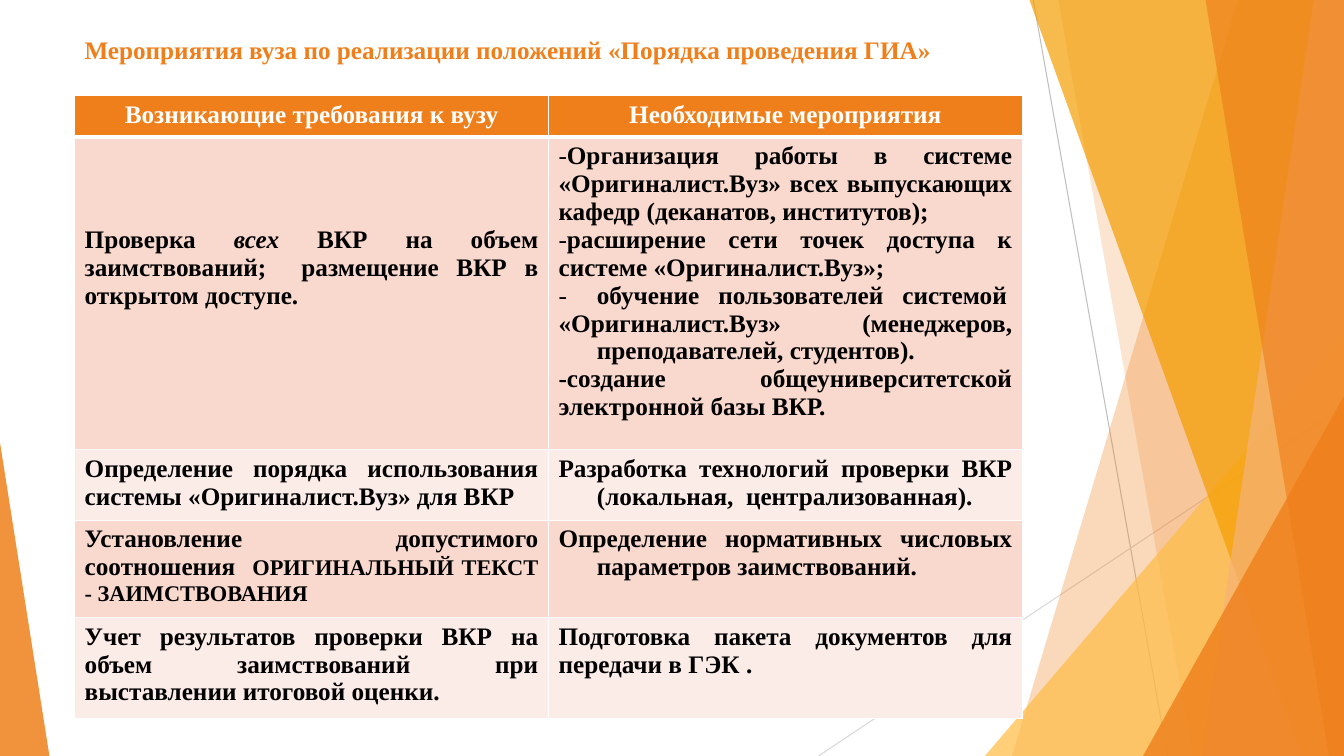
from pptx import Presentation
from pptx.dml.color import RGBColor
from pptx.enum.shapes import MSO_CONNECTOR as CONN, MSO_SHAPE as SHAPE
from pptx.enum.text import PP_ALIGN as ALIGN
from pptx.oxml.ns import qn
from pptx.util import Inches, Pt
from lxml.etree import SubElement

W, H = Inches(13.33), Inches(7.5)
FONT = "Times New Roman"
COLORS = {
    "orange": "EF7F1B", "amber": "F49D00", "yellow": "FFBD47", "peach": "F5B276",
    "grey": "BFBFBF", "light_grey": "D9D9D9", "white": "FFFFFF", "black": "000000",
    "band": "F9D8CD", "pale_band": "FCECE8",
}
TITLE = "Мероприятия вуза по реализации положений «Порядка проведения ГИА»"
HEADERS = ["Возникающие требования к вузу", "Необходимые мероприятия"]
HANG, BULLET = "hang", "bullet"
WIDE_GAP = (" ", 18, False)

BODY = [
    ([("", ("Проверка ", 18, False), ("всех ", 18, True),
       ("ВКР на объем заимствований;  размещение ВКР в открытом доступе.", 18, False))],
     [(BULLET, ("Организация работы в системе «Оригиналист.Вуз» всех выпускающих "
                "кафедр (деканатов, институтов);", 18, False)),
      (BULLET, ("расширение сети точек доступа к системе «Оригиналист.Вуз»;", 18, False)),
      (BULLET + HANG, ("обучение", 18, False), WIDE_GAP,
       ("пользователей", 18, False), WIDE_GAP, ("системой", 18, False)),
      (HANG, ("«Оригиналист.Вуз» (менеджеров, преподавателей, студентов).", 18, False)),
      ("", ("-создание общеуниверситетской электронной базы ВКР.", 18, False))]),
    ([("", ("Определение порядка использования системы «Оригиналист.Вуз» для ВКР", 18, False))],
     [(HANG, ("Разработка технологий проверки ВКР (локальная,  централизованная).", 18, False))]),
    ([("", ("Установление допустимого соотношения  ", 18, False),
       ("ОРИГИНАЛЬНЫЙ ТЕКСТ - ЗАИМСТВОВАНИЯ", 16, False))],
     [(HANG, ("Определение нормативных числовых параметров заимствований.", 18, False))]),
    ([("", ("Учет результатов проверки ВКР на объем заимствований при выставлении "
            "итоговой оценки.", 18, False))],
     [("", ("Подготовка пакета документов для передачи в ГЭК .", 18, False))]),
]


def rgb(name):
    return RGBColor.from_string(COLORS[name])


def place(box, x, y):
    left, top, width, height = box
    return int(left + width * x / 100), int(top + height * y / 100)


def add_run(p, text, color, size=18, italic=False):
    r = p.add_run()
    r.text = text
    r.font.name, r.font.size = FONT, Pt(size)
    r.font.bold, r.font.italic = True, italic
    r.font.color.rgb = rgb(color)
    return r


def paint(sp, color, opacity):
    sp.shadow.inherit = False
    sp.fill.solid()
    sp.fill.fore_color.rgb = rgb(color)
    sp.line.fill.background()
    tint = sp.fill._xPr.find(qn("a:solidFill"))[0]
    SubElement(tint, qn("a:alpha")).set("val", str(opacity * 1000))


def add_facet(s, box, top_x, bottom_x, color, opacity):
    corners = [place(box, x, y) for x, y in
               [(top_x, 0), (100, 0), (100, 100), (bottom_x, 100)]]
    builder = s.shapes.build_freeform(*corners[0])
    builder.add_line_segments(corners[1:], close=True)
    paint(builder.convert_to_shape(), color, opacity)


def add_corner(s, box, left, top, right, apex, color, opacity):
    x1, y1 = place(box, left, top)
    x2, y2 = place(box, right, 100)
    sp = s.shapes.add_shape(SHAPE.ISOSCELES_TRIANGLE, x1, y1, x2 - x1, y2 - y1)
    sp.adjustments[0] = apex
    paint(sp, color, opacity)


def add_backdrop(s, box):
    for start, end, color in [((76.88, 0), (86.87, 100), "grey"),
                              ((100, 53.7), (60.9, 100), "light_grey")]:
        line = s.shapes.add_connector(CONN.STRAIGHT, *place(box, *start), *place(box, *end))
        line.line.color.rgb, line.line.width = rgb(color), Pt(0.75)
        SubElement(line._element.spPr, qn("a:effectLst"))
    add_facet(s, box, 92.1, 75.3, "orange", 30)
    add_facet(s, box, 78.75, 88.75, "orange", 20)
    add_corner(s, box, 73.28, 44.4, 100, 1, "yellow", 72)
    add_facet(s, box, 76.6, 96.85, "amber", 70)
    add_facet(s, box, 97.75, 89.4, "peach", 70)
    add_facet(s, box, 89.7, 98.87, "orange", 65)
    add_corner(s, box, 85.05, 52.4, 100, 1, "orange", 80)
    add_corner(s, box, 0, 58.53, 3.68, 0, "orange", 85)


def add_title(s, box):
    tf = s.shapes.add_textbox(*box).text_frame
    tf.word_wrap = True
    add_run(tf.paragraphs[0], TITLE, "orange")


def style_cell(cell, fill, bottom_width=1):
    tcPr = cell._tc.get_or_add_tcPr()
    for side, width in [("L", 1), ("R", 1), ("T", 1), ("B", bottom_width)]:
        ln = SubElement(tcPr, qn(f"a:ln{side}"), w=str(Pt(width)))
        SubElement(SubElement(ln, qn("a:solidFill")), qn("a:srgbClr"), val=COLORS["white"])
    cell.fill.solid()
    cell.fill.fore_color.rgb = rgb(fill)


def write_cell(cell, paragraphs):
    tf = cell.text_frame
    for i, (layout, *runs) in enumerate(paragraphs):
        p = tf.add_paragraph() if i else tf.paragraphs[0]
        p.alignment = ALIGN.JUSTIFY
        pPr = p._p.get_or_add_pPr()
        if HANG in layout:
            pPr.set("marL", str(Inches(0.38)))
            pPr.set("indent", str(-Inches(0.38)))
        if BULLET in layout:
            SubElement(pPr, qn("a:buFont"), typeface=FONT)
            SubElement(pPr, qn("a:buChar"), char="-")
        for run in runs:
            text, size, italic = run
            r = add_run(p, text, "black", size, italic)
            if run == WIDE_GAP:
                r.font._element.set("spc", "900")


def add_measures(s, box):
    table = s.shapes.add_table(len(BODY) + 1, len(HEADERS), *box).table
    for column in table.columns:
        column.width = int(box[2] / len(HEADERS))
    for j, header in enumerate(HEADERS):
        cell = table.cell(0, j)
        style_cell(cell, "orange", 3)
        p = cell.text_frame.paragraphs[0]
        p.alignment = ALIGN.CENTER
        add_run(p, header, "white")
    for i, cells in enumerate(BODY, 1):
        for j, paragraphs in enumerate(cells):
            style_cell(table.cell(i, j), "band" if i % 2 else "pale_band")
            write_cell(table.cell(i, j), paragraphs)
    table.cell(1, 0).margin_top = Inches(0.88)


def main():
    prs = Presentation()
    prs.slide_width, prs.slide_height = W, H
    s = prs.slides.add_slide(prs.slide_layouts[6])
    left, width = Inches(0.74), Inches(9.4)
    add_backdrop(s, (0, 0, W, H))
    add_title(s, (left, Inches(0.29), width, Inches(0.62)))
    add_measures(s, (left, Inches(0.95), width, Inches(2.05)))
    prs.save("out.pptx")


if __name__ == "__main__":
    main()
